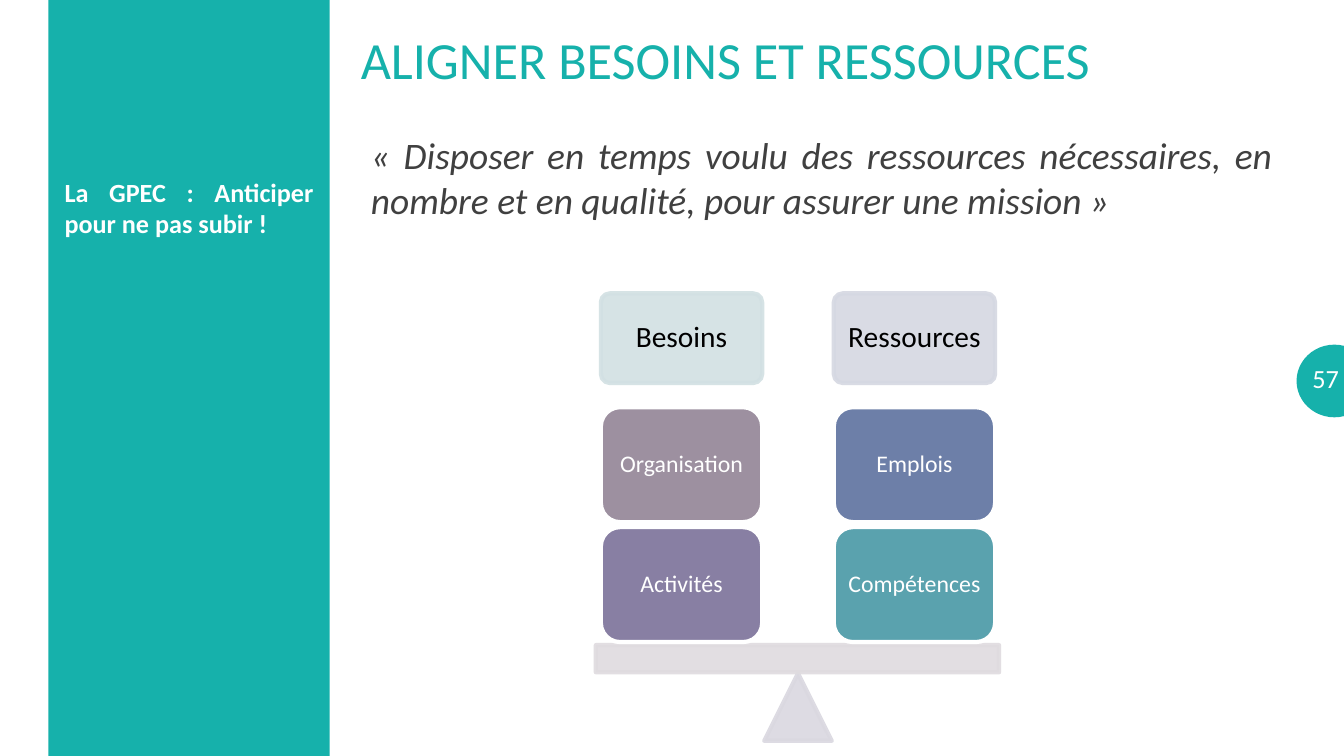
"""Build the slide on aligning needs and resources, with its balance diagram."""
from lxml import etree
from pptx import Presentation
from pptx.dml.color import RGBColor
from pptx.enum.shapes import MSO_SHAPE
from pptx.enum.text import MSO_ANCHOR, PP_ALIGN
from pptx.oxml.ns import qn
from pptx.util import Pt

RECT, ROUND = MSO_SHAPE.RECTANGLE, MSO_SHAPE.ROUNDED_RECTANGLE
OVAL, TRIANGLE = MSO_SHAPE.OVAL, MSO_SHAPE.ISOSCELES_TRIANGLE
TOP, MIDDLE, BOTTOM = MSO_ANCHOR.TOP, MSO_ANCHOR.MIDDLE, MSO_ANCHOR.BOTTOM
LEFT, CENTER, RIGHT = PP_ALIGN.LEFT, PP_ALIGN.CENTER, PP_ALIGN.RIGHT
JUSTIFY = PP_ALIGN.JUSTIFY

PX = 9144
FONT = "Calibri"
TEAL, WHITE, BLACK, GREY = "16B1AB", "FFFFFF", "000000", "404040"

TITLE = "ALIGNER BESOINS ET RESSOURCES"
SIDE_NOTE = "La GPEC : Anticiper pour ne pas subir !"
QUOTE = ("« Disposer en temps voulu des ressources nécessaires, "
         "en nombre et en qualité, pour assurer une mission »")
PAGE_NUMBER = "57"
PANS = [
    ("Besoins", "D2E0E3", [("Organisation", "9D90A0"), ("Activités", "887FA3")]),
    ("Ressources", "D5D8E2", [("Emplois", "6D7FA8"), ("Compétences", "5AA2AE")]),
]
BEAM, PIVOT = "DFDBDF", "DAD8E0"

PAN_LEFT, PAN_STEP, PAN_WIDTH = 596, 231, 160
HEAD_TOP, HEAD_HEIGHT = 291, 89
BLOCK_TOP, BLOCK_STEP, BLOCK_HEIGHT = 404, 119, 114


def rgb(color):
    return RGBColor.from_string(color)


def write(box, text, size, color, align=LEFT, anchor=TOP, inset=(10, 5),
          bold=False, italic=False, spacing=None):
    frame = box.text_frame
    frame.word_wrap = True
    frame.vertical_anchor = anchor
    frame.margin_left = frame.margin_right = inset[0] * PX
    frame.margin_top = frame.margin_bottom = inset[1] * PX
    para = frame.paragraphs[0]
    para.alignment = align
    para.line_spacing = spacing
    span = para.add_run()
    span.text = text
    font = span.font
    font.name, font.size, font.bold, font.italic = FONT, Pt(size), bold, italic
    font.color.rgb = rgb(color)


def add_text(page, area, text, size, color, **style):
    box = page.shapes.add_textbox(*(length * PX for length in area))
    write(box, text, size, color, **style)


def add_box(page, kind, area, fill, line=None, width=3, opacity=100):
    box = page.shapes.add_shape(kind, *(length * PX for length in area))
    box.shadow.inherit = False
    box.fill.solid()
    box.fill.fore_color.rgb = rgb(fill)
    if line:
        box.line.color.rgb = rgb(line)
        box.line.width = Pt(width)
    else:
        box.line.fill.background()
    if opacity < 100:
        for color in box.fill._xPr.iter(qn("a:srgbClr")):
            etree.SubElement(color, qn("a:alpha"), val=str(opacity * 1000))
    return box


def add_balance(page):
    label = {"align": CENTER, "anchor": MIDDLE, "spacing": 0.9}
    lefts = [PAN_LEFT + PAN_STEP * column for column in range(len(PANS))]
    for left, (name, color, _) in zip(lefts, PANS):
        head = add_box(page, ROUND, (left, HEAD_TOP, PAN_WIDTH, HEAD_HEIGHT),
                       color, color, opacity=90)
        head.adjustments[0] = 0.1
        write(head, name, 21, BLACK, inset=(9, 9), **label)
    add_box(page, TRIANGLE, (758, 668, 67, 67), PIVOT, PIVOT, opacity=90)
    add_box(page, RECT, (591, 640, 400, 27), BEAM, BEAM, opacity=90)
    for left, (_, _, blocks) in zip(lefts, PANS):
        for row, (name, color) in enumerate(blocks):
            top = BLOCK_TOP + BLOCK_STEP * row
            block = add_box(page, ROUND, (left, top, PAN_WIDTH, BLOCK_HEIGHT), color, WHITE)
            write(block, name, 17, WHITE, inset=(7, 7), **label)


def main():
    deck = Presentation()
    deck.slide_width, deck.slide_height = 1333 * PX, 750 * PX
    page = deck.slides.add_slide(deck.slide_layouts[6])
    add_box(page, RECT, (48, 0, 279, 750), TEAL)
    add_box(page, OVAL, (1287, 343, 73, 70), TEAL, TEAL, width=1.5)
    add_text(page, (1283, 355, 58, 40), PAGE_NUMBER, 18.7, WHITE,
             align=RIGHT, anchor=MIDDLE, inset=(13, 7))
    add_text(page, (48, 159, 279, 536), SIDE_NOTE, 18.7, WHITE,
             align=JUSTIFY, inset=(16, 16), bold=True)
    add_text(page, (358, 114, 915, 111), QUOTE, 26.7, GREY,
             align=JUSTIFY, anchor=BOTTOM, italic=True)
    add_text(page, (348, 22, 966, 77), TITLE, 37.3, TEAL)
    add_balance(page)
    deck.save("out.pptx")


if __name__ == "__main__":
    main()
